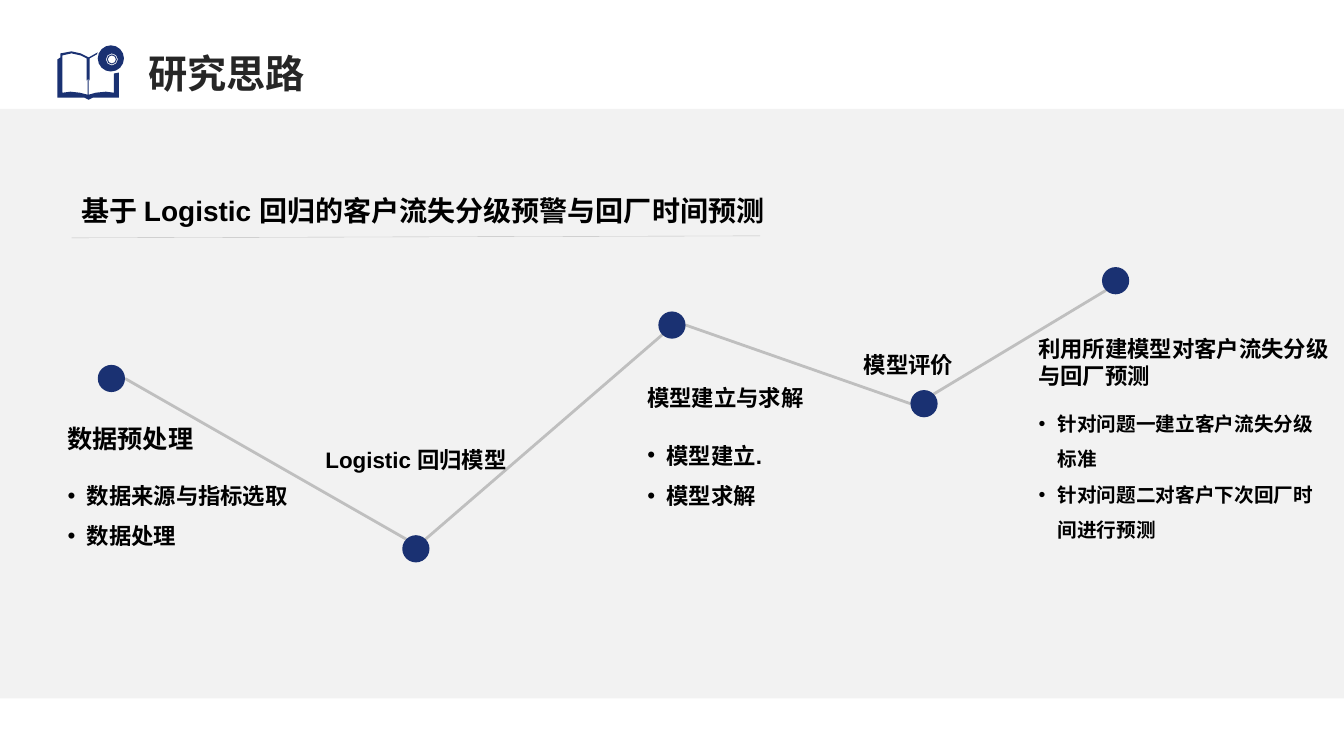
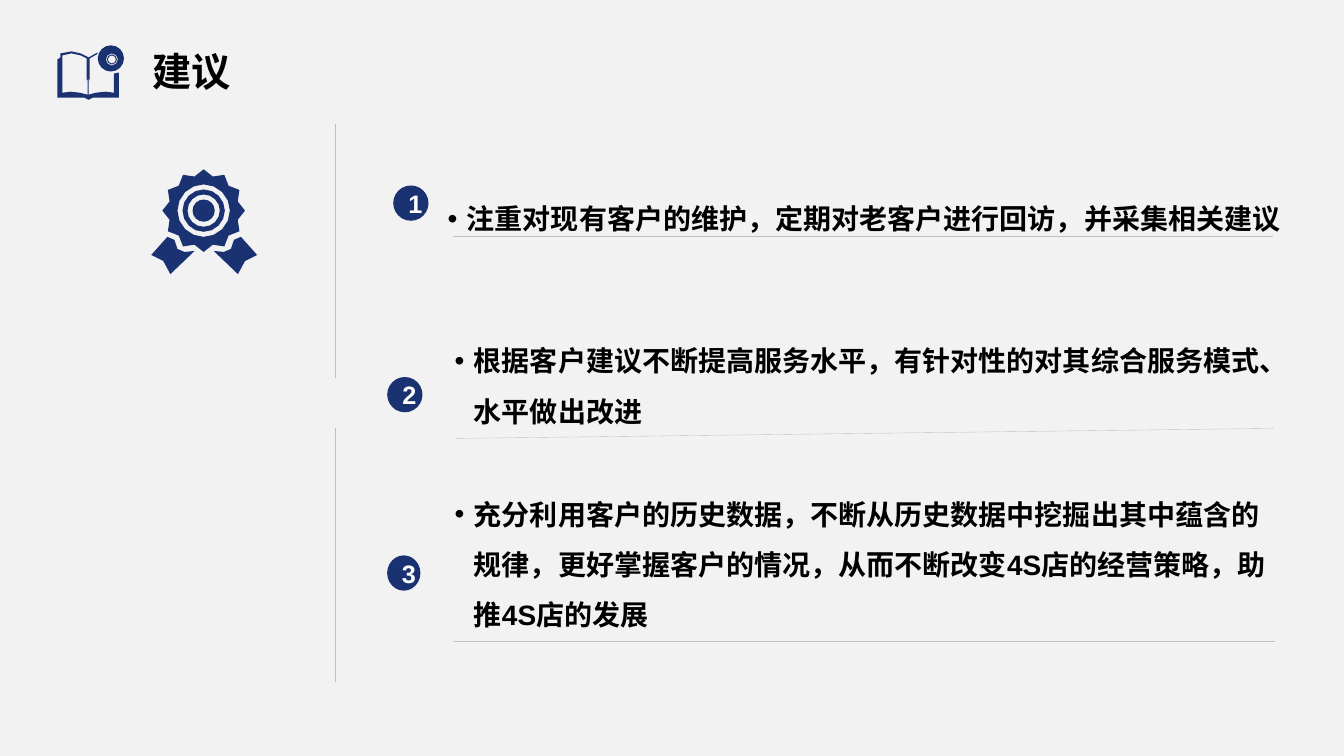
"""Build two slides: the research outline and the advice list."""
import math

from lxml import etree
from pptx import Presentation
from pptx import util as u
from pptx.dml.color import RGBColor
from pptx.enum import shapes, text
from pptx.oxml.ns import qn

NAVY = RGBColor(0x1A, 0x31, 0x72)
PALE = RGBColor(0xF2, 0xF2, 0xF2)
GREY = RGBColor(0xBF, 0xBF, 0xBF)
DARK = RGBColor(0x26, 0x26, 0x26)
BLACK = RGBColor(0, 0, 0)
WHITE = RGBColor(255, 255, 255)
FONT = "Arial"
UNIT = 1000
DOT = 0.27

BOOK = [(.57, .97), (.57, .59), (.6, .57), (.6, .53), (.71, .51), (.8, .53),
        (.88, .57), (.97, .52), (.96, .54), (.89, .58), (.89, .8), (.88, .78),
        (.88, .94), (.95, .92), (1.05, .91), (1.13, .92), (1.13, .73),
        (1.18, .72), (1.18, .97), (.92, .97), (.88, .99), (.84, .97)]
PAGE = [(.62, .55), (.71, .53), (.8, .55), (.86, .58), (.86, .8), (.87, .78),
        (.87, .94), (.79, .92), (.7, .91), (.62, .92)]
RIBBON = [(1.66, 2.35), (1.73, 2.38), (1.76, 2.47), (1.83, 2.5), (1.93, 2.49),
          (1.69, 2.72), (1.62, 2.59), (1.5, 2.53)]


def place(item, box):
    """Move an item to left, top, width, height in inches."""
    item.left, item.top, item.width, item.height = map(u.Inches, box)


def bullet(para):
    """Give a paragraph a round bullet with a hanging indent."""
    props = para._p.get_or_add_pPr()
    props.set("marL", str(u.Inches(.19)))
    props.set("indent", str(u.Inches(-.19)))
    etree.SubElement(props, qn("a:buFont")).set("typeface", FONT)
    etree.SubElement(props, qn("a:buChar")).set("char", "•")


def write(item, lines, size=16, color=BLACK, anchor=text.MSO_ANCHOR.MIDDLE,
          align=text.PP_ALIGN.LEFT, space=1.0, marks=False, wrap=True):
    """Fill an item with one bold paragraph for each line."""
    frame = item.text_frame
    frame.word_wrap = wrap
    frame.auto_size = text.MSO_AUTO_SIZE.NONE
    frame.vertical_anchor = anchor
    for i, line in enumerate(lines):
        para = frame.add_paragraph() if i else frame.paragraphs[0]
        para.alignment = align
        para.line_spacing = space
        para.space_before = para.space_after = u.Pt(0)
        if marks:
            bullet(para)
        run = para.add_run()
        run.text = line
        font = run.font
        font.name, font.size, font.bold = FONT, u.Pt(size), True
        font.color.rgb = color


def paint(item, color=None):
    """Fill a shape flat, or leave it clear, with no line or shadow."""
    item.shadow.inherit = False
    if color is None:
        item.fill.background()
    else:
        item.fill.solid()
        item.fill.fore_color.rgb = color
    item.line.fill.background()
    return item


def solid(slide, kind, box, color=None):
    """Add a preset shape in one flat colour."""
    return paint(slide.shapes.add_shape(kind, *map(u.Inches, box)), color)


def label(slide, box, lines, size=16):
    """Add a heading in a clear square-cornered frame."""
    item = solid(slide, shapes.MSO_SHAPE.ROUNDED_RECTANGLE, box)
    item.adjustments[0] = 0
    write(item, lines, size=size, wrap=False)


def rule(slide, start, end, width=.25):
    """Add a grey straight line."""
    ends = map(u.Inches, (*start, *end))
    line = slide.shapes.add_connector(shapes.MSO_CONNECTOR.STRAIGHT, *ends)
    line.line.color.rgb = GREY
    line.line.width = u.Pt(width)
    etree.SubElement(line.element.spPr, qn("a:effectLst"))


def ring(x, y, size, count=16, wave=0):
    """Return the points of a circle, in and out by turns if wave is set."""
    loop = []
    for step in range(count):
        turn = math.tau * step / count
        reach = size + wave * (-1) ** step
        loop.append((x + reach * math.sin(turn), y - reach * math.cos(turn)))
    return loop


def icon(slide, loops):
    """Draw closed loops as one navy outline shape."""
    loops = [[(x * UNIT, y * UNIT) for x, y in loop] for loop in loops]
    pen = slide.shapes.build_freeform(*loops[0][0], scale=u.Inches(1) / UNIT)
    for i, loop in enumerate(loops):
        if i:
            pen.move_to(*loop[0])
        pen.add_line_segments(loop[1:], close=True)
    paint(pen.convert_to_shape(), NAVY)


def start(deck, title, spot, color):
    """Add a slide with its title."""
    slide = deck.slides.add_slide(deck.slide_layouts.get_by_name("Comparison"))
    place(slide.shapes.title, (*spot, 11.87, .73))
    write(slide.shapes.title, [title], size=28, color=color, space=.9,
          anchor=text.MSO_ANCHOR.BOTTOM)
    return slide


def book(slide):
    """Draw the book and disc icon."""
    disc = [ring(1.1, .58, .13)]
    disc += [ring(1.11, .59, size, count=8) for size in (.06, .05, .04)]
    icon(slide, [BOOK, PAGE, *disc])


def lists(slide, items, **form):
    """Put bulleted lists in body placeholders and drop the spare ones."""
    bodies = [p for p in slide.placeholders if p.placeholder_format.idx]
    for body, (box, size, lines) in zip(bodies, items):
        place(body, box)
        write(body, lines, size=size, space=1.5, marks=True, **form)
    for body in bodies[len(items):]:
        body.element.getparent().remove(body.element)


def rim(dot, turn):
    """Return the point on a dot's edge at an angle in degrees."""
    half, turn = DOT / 2, math.radians(turn)
    return (dot[0] + half + half * math.cos(turn),
            dot[1] + half - half * math.sin(turn))


def outline(deck):
    """Build the research outline slide."""
    slide = start(deck, "研究思路", (1.37, .28), DARK)
    rect = shapes.MSO_SHAPE.RECTANGLE
    for spot, (top, high, color) in enumerate([(0, 7.51, WHITE),
                                               (1.08, 5.85, PALE)]):
        band = solid(slide, rect, (0, top, 13.33, high), color).element
        band.getparent().insert(2 + spot, band)
    book(slide)

    dots = [(.97, 3.62), (3.99, 5.31), (6.53, 3.09), (9.03, 3.87), (10.93, 2.65)]
    turns = [(0, 135), (45, 225), (0, 180), (45, 225)]
    for head, tail, (out, into) in zip(dots, dots[1:], turns):
        rule(slide, rim(head, out), rim(tail, into), width=2)
    for dot in dots:
        solid(slide, shapes.MSO_SHAPE.OVAL, (*dot, DOT, DOT), NAVY)

    topic = slide.shapes.add_textbox(*map(u.Inches, (.71, 1.87, 7.17, .48)))
    top = text.MSO_ANCHOR.TOP
    write(topic, ["基于 Logistic 回归的客户流失分级预警与回厂时间预测"], size=20,
          anchor=top, wrap=False)
    rule(slide, (.71, 2.36), (7.54, 2.34))
    heads = [((3.13, 4.36), 16, "Logistic 回归模型"),
             ((.57, 4.15), 18, "数据预处理"),
             ((6.32, 3.75), 16, "模型建立与求解"),
             ((8.47, 3.42), 16, "模型评价")]
    for spot, size, line in heads:
        label(slide, (*spot, 2.34, .39), [line], size=size)
    label(slide, (10.2, 3.32, 3.13, .55), ["利用所建模型对客户流失分级", "与回厂预测"])

    lists(slide, [
        ((.57, 4.6, 2.5, .72), 16, ["数据来源与指标选取", "数据处理"]),
        ((6.32, 4.2, 2.34, .72), 16, ["模型建立.", "模型求解"]),
        ((10.2, 3.92, 2.95, 1.26), 14,
         ["针对问题一建立客户流失分级标准", "针对问题二对客户下次回厂时间进行预测"]),
    ], anchor=top)


def advice(deck):
    """Build the advice slide."""
    slide = start(deck, "建议", (1.41, .26), BLACK)
    book(slide)
    seal = [ring(2.02, 2.09, .38, count=24, wave=.03)]
    seal += [ring(2.02, 2.09, size) for size in (.26, .21, .16, .11)]
    mirror = [(4.05 - x, y) for x, y in RIBBON]
    icon(slide, [RIBBON, mirror, *seal])
    for top in (1.23, 4.25):
        rule(slide, (3.32, top), (3.32, top + 2.52))

    lists(slide, [
        ((4.34, 1.68, 8.55, .81), 20, ["注重对现有客户的维护，定期对老客户进行回访，并采集相关建议"]),
        ((4.41, 3.14, 8.29, 1.21), 20,
         ["根据客户建议不断提高服务水平，有针对性的对其综合服务模式、水平做出改进"]),
        ((4.41, 5.03, 8.29, .97), 20,
         ["充分利用客户的历史数据，不断从历史数据中挖掘出其中蕴含的规律，"
          "更好掌握客户的情况，从而不断改变4S店的经营策略，助推4S店的发展"]),
    ])
    marks = [(3.9, 1.84, .35), (3.84, 3.74, .35), (3.84, 5.51, .33)]
    for count, (left, top, wide) in enumerate(marks, 1):
        badge = solid(slide, shapes.MSO_SHAPE.OVAL, (left, top, wide, .35), NAVY)
        write(badge, [str(count)], size=18, color=WHITE,
              align=text.PP_ALIGN.CENTER)
    for head, tail in [((4.49, 2.34), (12.63, 2.34)), ((4.52, 4.35), (12.63, 4.25)),
                       ((4.5, 6.36), (12.65, 6.36))]:
        rule(slide, head, tail)


def main():
    """Set up the deck, build both slides and save."""
    deck = Presentation()
    deck.slide_width, deck.slide_height = u.Inches(13.33), u.Inches(7.5)
    back = deck.slide_master.background.fill
    back.solid()
    back.fore_color.rgb = PALE
    outline(deck)
    advice(deck)
    deck.save("out.pptx")


if __name__ == "__main__":
    main()
